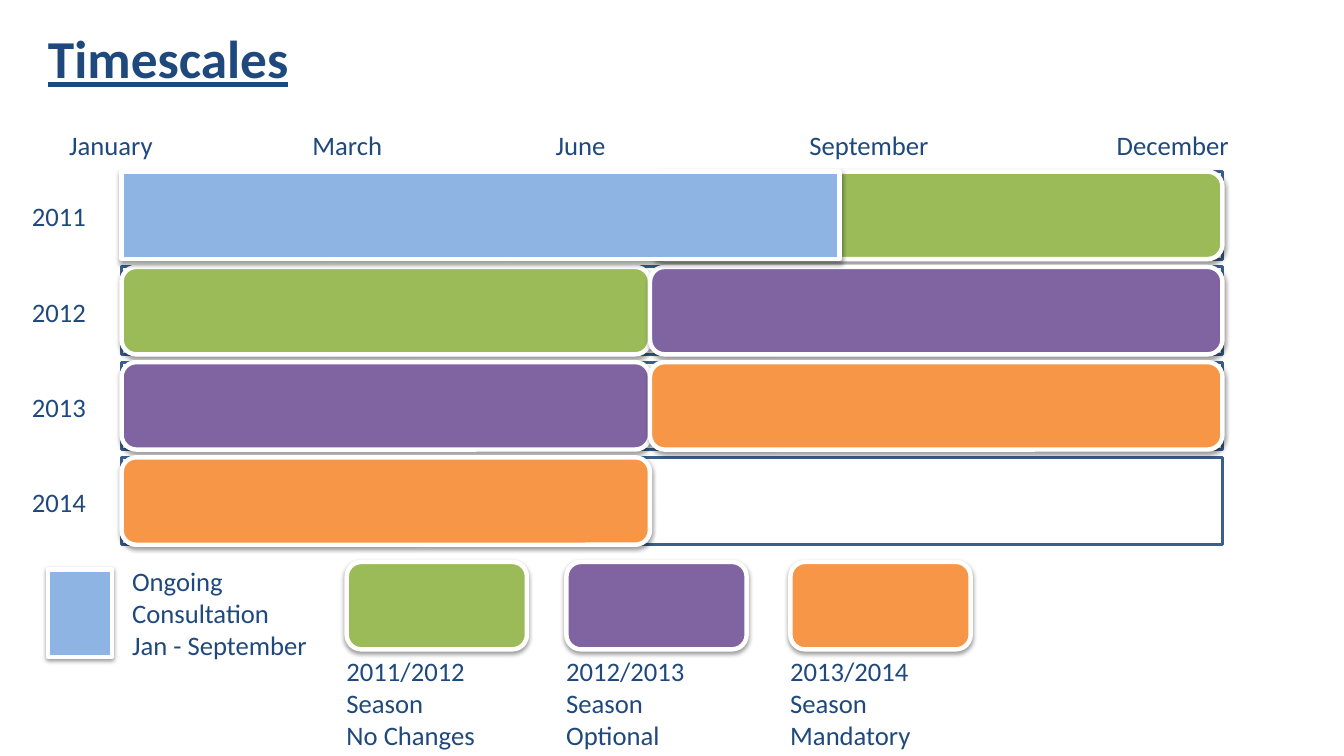
from dataclasses import dataclass
from lxml import etree
from pptx import Presentation
from pptx.dml.color import RGBColor
from pptx.enum.shapes import MSO_SHAPE
from pptx.enum.text import MSO_ANCHOR, PP_ALIGN
from pptx.oxml.ns import qn
from pptx.util import Inches, Pt


@dataclass(frozen=True)
class Theme:
    font: str = "Calibri"
    ink: str = "1F497D"
    frame: str = "3A5F8C"
    white: str = "FFFFFF"
    blue: str = "8EB4E3"
    green: str = "9BBB59"
    purple: str = "8064A2"
    orange: str = "F79646"
    title_size: int = 36
    text_size: int = 18


T = Theme()

# Content: bars run from start to end as shares of the year track
TITLE = "Timescales"
YEARS = ["2011", "2012", "2013", "2014"]
MONTHS = [("January", 0.55, 1.49), ("March", 2.83, 1.49), ("June", 5.11, 1.49),
          ("September", 7.49, 2.28), ("December", 10.37, 1.79)]
MID_YEAR, CONSULTATION_END = 0.48, 0.652
SEASONS = [  # colour, (row, start, end) bars, legend left, label width, label
    (T.green, [(0, MID_YEAR, 1), (1, 0, MID_YEAR)], 3.25, 2.18,
     ["2011/2012", "Season", "No Changes"]),
    (T.purple, [(1, MID_YEAR, 1), (2, 0, MID_YEAR)], 5.31, 1.98,
     ["2012/2013", "Season", "Optional"]),
    (T.orange, [(2, MID_YEAR, 1), (3, 0, MID_YEAR)], 7.41, 1.98,
     ["2013/2014", "Season", "Mandatory"]),
]
CONSULTATION = ["Ongoing Consultation", "Jan - September"]

# Grid, in inches
SLIDE_W, SLIDE_H = 12.6, 7.09
TRACK_X, TRACK_W = 1.14, 10.32
ROW_Y, ROW_STEP, BAR_H = 1.61, 0.893, 0.82
LEGEND_Y, LEGEND_W = 5.27, 1.69
INSET = 0.1

prs = Presentation()
prs.slide_width, prs.slide_height = Inches(SLIDE_W), Inches(SLIDE_H)
s = prs.slides.add_slide(prs.slide_layouts[5])


def place(x, y, w, h):
    return [Inches(v) for v in (x, y, w, h)]


def style(p, size, bold=False, underline=False):
    p.alignment = PP_ALIGN.LEFT
    for r in p.runs:
        r.font.name, r.font.size = T.font, Pt(size)
        r.font.bold, r.font.underline = bold, underline
        r.font.color.rgb = RGBColor.from_string(T.ink)


def add_label(lines, x, y, w, h=0.4):
    tf = s.shapes.add_textbox(*place(x, y, w, h)).text_frame
    tf.word_wrap = True
    tf.text = "\n".join(lines)
    for p in tf.paragraphs:
        style(p, T.text_size)


def add_box(kind, fill, line, width, x, y, w, h=BAR_H):
    sp = s.shapes.add_shape(kind, *place(x, y, w, h))
    sp.shadow.inherit = False
    sp.fill.solid()
    sp.fill.fore_color.rgb = RGBColor.from_string(fill)
    sp.line.color.rgb = RGBColor.from_string(line)
    sp.line.width = Pt(width)
    return sp


def add_raised(kind, fill, x, y, w):
    """Add a white-edged block with a soft shadow below it."""
    sp = add_box(kind, fill, T.white, 3, x, y, w)
    effects = sp._element.spPr.find(qn("a:effectLst"))
    shadow = etree.SubElement(effects, qn("a:outerShdw"), blurRad=str(Pt(3.1)),
                              dist=str(Pt(1.6)), dir="5400000", rotWithShape="0")
    color = etree.SubElement(shadow, qn("a:srgbClr"), val="000000")
    etree.SubElement(color, qn("a:alpha"), val="38000")


def add_bar(kind, fill, row, start, end):
    add_raised(kind, fill, TRACK_X + start * TRACK_W, ROW_Y + row * ROW_STEP,
               (end - start) * TRACK_W)


# Title
title = s.shapes.title
title.left, title.top, title.width, title.height = place(0.35, 0.19, 11.34, 0.55)
title.text_frame.text = TITLE
title.text_frame.vertical_anchor = MSO_ANCHOR.TOP
style(title.text_frame.paragraphs[0], T.title_size, bold=True, underline=True)

# Year tracks and axis labels
for row, year in enumerate(YEARS):
    y = ROW_Y + row * ROW_STEP
    add_box(MSO_SHAPE.RECTANGLE, T.white, T.frame, 2, TRACK_X, y, TRACK_W)
    add_label([year], 0.2, y + 0.22, 1.24)
for month, x, w in MONTHS:
    add_label([month], x, 1.16, w)

# Seasons: bars, legend block and label
for color, bars, x, label_w, label in SEASONS:
    for bar in bars:
        add_bar(MSO_SHAPE.ROUNDED_RECTANGLE, color, *bar)
    add_raised(MSO_SHAPE.ROUNDED_RECTANGLE, color, x, LEGEND_Y, LEGEND_W)
    add_label(label, x - INSET, LEGEND_Y + BAR_H, label_w, 1.01)

# Consultation: bar over the first season, legend block and label
add_bar(MSO_SHAPE.RECTANGLE, T.blue, 0, 0, CONSULTATION_END)
add_raised(MSO_SHAPE.RECTANGLE, T.blue, 0.45, 5.34, 0.6)
add_label(CONSULTATION, TRACK_X, 5.25, 2.28, 1.01)

prs.save("out.pptx")
